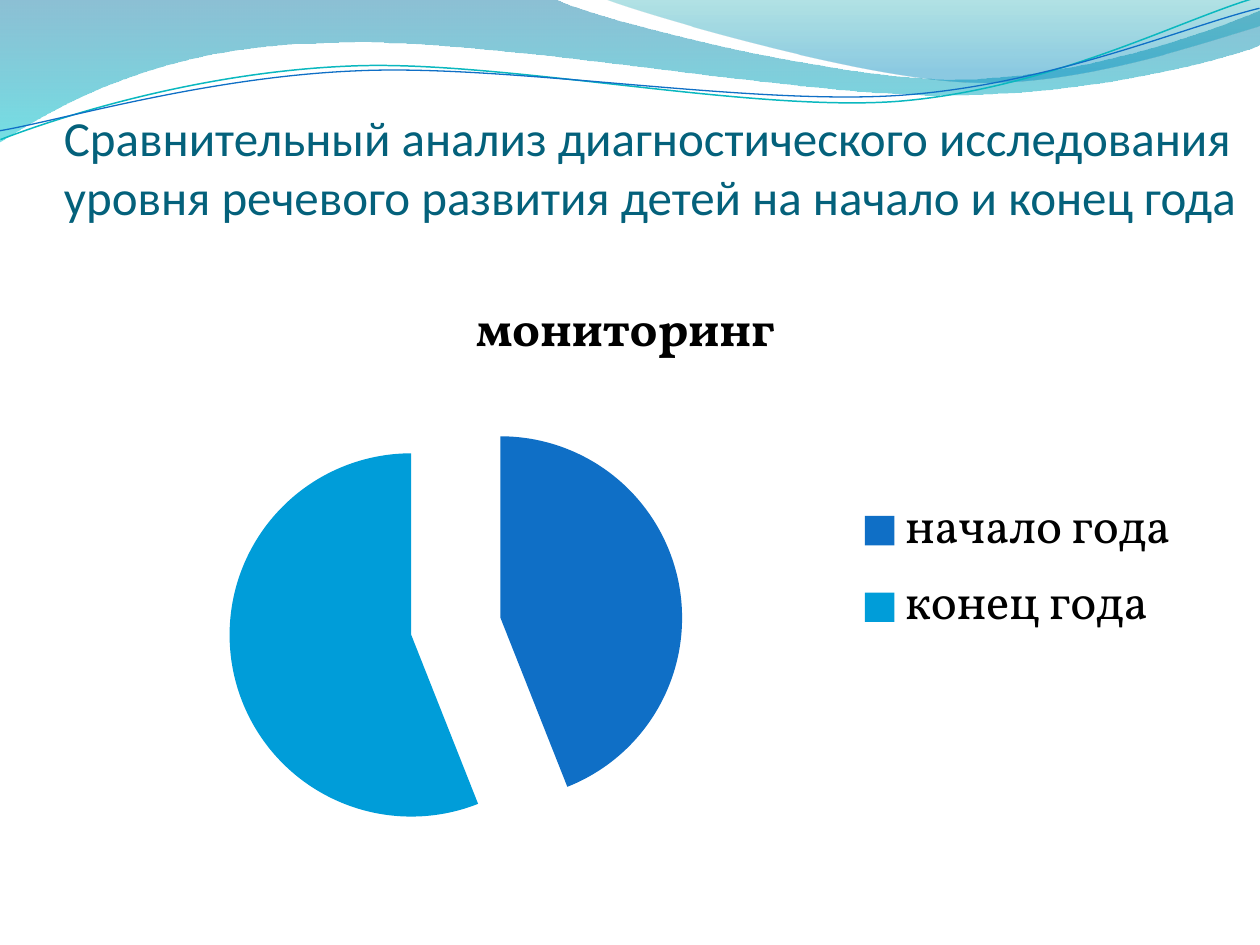
from lxml.etree import SubElement
from pptx import Presentation
from pptx.chart.data import CategoryChartData
from pptx.dml.color import RGBColor
from pptx.enum.chart import XL_CHART_TYPE, XL_LEGEND_POSITION
from pptx.enum.text import MSO_ANCHOR
from pptx.oxml import parse_xml
from pptx.oxml.ns import nsdecls, qn
from pptx.util import Emu, Pt

PX = 914400 / 126
BLACK = RGBColor(0x00, 0x00, 0x00)
TITLE = RGBColor(0x04, 0x61, 0x7B)
BLUE = RGBColor(0x0F, 0x6F, 0xC6)
SKY = RGBColor(0x00, 0x9D, 0xD9)
TEAL = RGBColor(0x0A, 0xB8, 0xBF)

HEADING = ("Сравнительный анализ диагностического исследования "
           "уровня речевого развития детей на начало и конец года")
CHART_TITLE = "мониторинг "
SHARES = [("начало года", 44, BLUE), ("конец года", 56, SKY)]

# Each outline has a box and steps. After the start, a step is a line (x, y)
# or a curve (x1, y1, x2, y2, x, y).
# Gradient stops are (position %, colour, opacity %).
WAVES = [
    ((-1, -1, 1262, 143),
     [(0, 0), (554, -1), (600, 21, 837, 79, 955, 79),
      (1075, 79, 1207, 33, 1260, 11), (1261, 45),
      (1239, 55, 1096, 96, 940, 95), (784, 95, 481, 35, 324, 43),
      (163, 45, 58, 105, -1, 142), (0, 0)],
     [(0, RGBColor(0x00, 0x74, 0xA1), 45), (100, RGBColor(0x00, 0xC6, 0xCF), 55)]),
    ((604, -1, 656, 88),
     [(604, -1), (641, 14, 859, 78, 969, 82),
      (1079, 87, 1211, 40, 1260, 26), (1260, 0), (604, -1)],
     [(0, RGBColor(0x00, 0xA1, 0xA9), 30), (80, RGBColor(0x00, 0x8B, 0xBF), 45)]),
]
TILT = 357.3
STRANDS = [
    ((-2, 28, 1262, 89),
     [(-2, 110), (58, 90, 199, 52, 350, 53), (499, 53, 745, 118, 896, 114),
      (1049, 109, 1184, 45, 1260, 27)], TEAL, 0.85),
    ((-2, 38, 1263, 73),
     [(-2, 101), (57, 94, 207, 57, 357, 58), (509, 58, 750, 112, 902, 108),
      (1052, 104, 1189, 52, 1262, 38)], BLUE, 0.75),
]


def px(*nums):
    return [Emu(round(n * PX)) for n in nums]


def draw(slide, box, steps, close):
    """Build the outline from its corners, then bend the steps that are curves."""
    ends = [px(*step[-2:]) for step in steps]
    pen = slide.shapes.build_freeform(*ends[0])
    pen.add_line_segments(ends[1:], close=close)
    shape = pen.convert_to_shape()
    shape.shadow.inherit = False
    shape.left, shape.top, shape.width, shape.height = px(*box)
    left, top, width, height = box
    track = next(shape._element.iter(qn("a:path")))
    track.set("w", str(width))
    track.set("h", str(height))
    for move, step in zip(list(track), steps):
        if len(step) == 6:
            move.tag = qn("a:cubicBezTo")
        for point in list(move):
            move.remove(point)
        for x, y in zip(step[::2], step[1::2]):
            SubElement(move, qn("a:pt"), x=str(x - left), y=str(y - top))
    return shape


def shade(shape, stops):
    """Fill from top to bottom with partly clear colours."""
    marks = "".join(
        f'<a:gs pos="{pos * 1000}"><a:srgbClr val="{color}">'
        f'<a:alpha val="{alpha * 1000}"/></a:srgbClr></a:gs>'
        for pos, color, alpha in stops)
    fill = parse_xml(f'<a:gradFill {nsdecls("a")}><a:gsLst>{marks}</a:gsLst>'
                     '<a:lin ang="5400000" scaled="0"/></a:gradFill>')
    shape._element.spPr.find(qn("a:custGeom")).addnext(fill)


def add_waves(slide):
    for box, steps, stops in WAVES:
        wave = draw(slide, box, steps, True)
        wave.line.fill.background()
        shade(wave, stops)
    for box, steps, color, width in STRANDS:
        strand = draw(slide, box, steps, False)
        strand.rotation = TILT
        strand.fill.background()
        strand.line.color.rgb = color
        strand.line.width = Pt(width)


def add_heading(slide):
    frame = slide.shapes.add_textbox(*px(64, 37, 1196, 248)).text_frame
    frame.word_wrap = True
    frame.vertical_anchor = MSO_ANCHOR.BOTTOM
    frame.margin_left = frame.margin_right = 0
    frame.margin_bottom, = px(60)
    frame.text = HEADING
    font = frame.paragraphs[0].runs[0].font
    font.name, font.size, font.color.rgb = "Calibri", Pt(28), TITLE


def style(font, bold):
    font.name, font.size, font.bold = "Vollkorn", Pt(28), bold
    font.color.rgb = BLACK


def add_pie(slide):
    data = CategoryChartData()
    data.categories = [name for name, _, _ in SHARES]
    data.add_series(CHART_TITLE, [value for _, value, _ in SHARES])
    chart = slide.shapes.add_chart(
        XL_CHART_TYPE.PIE, *px(63, 267, 1134, 604), data).chart
    chart.font.name, chart.font.size = "Vollkorn", Pt(10)
    chart.font.color.rgb = BLACK
    chart.has_title = True
    title = chart.chart_title.text_frame
    title.text = CHART_TITLE
    style(title.paragraphs[0].runs[0].font, True)
    chart.has_legend = True
    chart.legend.position = XL_LEGEND_POSITION.RIGHT
    chart.legend.include_in_layout = False
    style(chart.legend.font, False)
    series = chart.plots[0].series[0]
    for i, (_, _, color) in enumerate(SHARES):
        fill = series.points[i].format.fill
        fill.solid()
        fill.fore_color.rgb = color
    burst = parse_xml(f'<c:explosion {nsdecls("c")} val="25"/>')
    series._element.find(qn("c:dPt")).addprevious(burst)


def main():
    deck = Presentation()
    deck.slide_width, deck.slide_height = px(1260, 945)
    slide = deck.slides.add_slide(deck.slide_layouts[6])
    add_waves(slide)
    add_heading(slide)
    add_pie(slide)
    deck.save("out.pptx")


if __name__ == "__main__":
    main()
